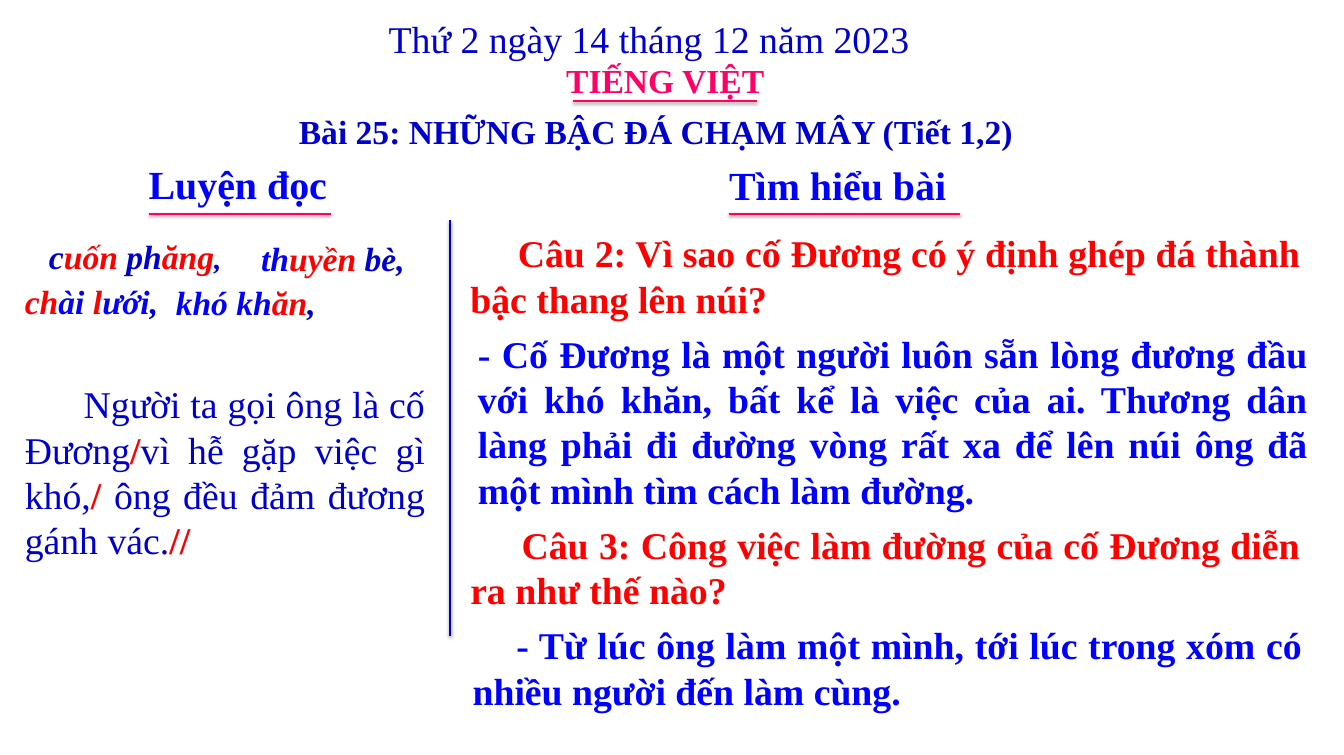
from lxml import etree
from pptx import Presentation
from pptx import util as u
from pptx.dml.color import RGBColor
from pptx.enum import shapes, text
from pptx.oxml import ns

FONT = "Times New Roman"
COLORS = {"navy": "0000CC", "blue": "0000FF", "red": "FF0000", "pink": "FF0066"}
ALIGN = {"left": text.PP_ALIGN.LEFT, "center": text.PP_ALIGN.CENTER,
         "justify": text.PP_ALIGN.JUSTIFY}


def color(name):
    return RGBColor.from_string(COLORS[name])


def write(sp, runs, size=36, bold=False, italic=False, align="left",
          wrap=True, indent=0, inset=(0.1, 0.05)):
    tf = sp.text_frame
    tf.word_wrap = wrap
    tf.auto_size = text.MSO_AUTO_SIZE.SHAPE_TO_FIT_TEXT
    tf.vertical_anchor = text.MSO_ANCHOR.TOP
    tf.margin_left = tf.margin_right = u.Inches(inset[0])
    tf.margin_top = tf.margin_bottom = u.Inches(inset[1])
    p = tf.paragraphs[0]
    p.alignment = ALIGN[align]
    if indent:
        pPr = p._p.get_or_add_pPr()
        pPr.set("marL", "0")
        pPr.set("indent", str(u.Inches(indent)))
    for content, name, *changes in runs:
        style = {"size": size, "bold": bold, **(changes[0] if changes else {})}
        r = p.add_run()
        r.text = content
        r.font.name = FONT
        r.font.size = u.Pt(style["size"])
        r.font.bold = style["bold"]
        r.font.italic = italic
        r.font.color.rgb = color(name)


def place(sp, box):
    sp.left, sp.top, sp.width, sp.height = map(u.Inches, box)


def add_text(s, box, runs, **style):
    sp = s.shapes.add_textbox(*map(u.Inches, box))
    write(sp, runs, **style)


def add_rule(s, start, end, name):
    sp = s.shapes.add_connector(shapes.MSO_CONNECTOR.STRAIGHT,
                                *map(u.Inches, start + end))
    sp.line.color.rgb = color(name)
    sp.line.width = u.Pt(2)
    effects = etree.SubElement(sp._element.spPr, ns.qn("a:effectLst"))
    shadow = etree.SubElement(effects, ns.qn("a:outerShdw"), blurRad=str(u.Pt(3.1)),
                              dist=str(u.Pt(1.6)), dir="5400000", rotWithShape="0")
    black = etree.SubElement(shadow, ns.qn("a:srgbClr"), val="000000")
    etree.SubElement(black, ns.qn("a:alpha"), val="38000")


def add_header(s):
    title = s.shapes.title
    place(title, (3.73, 1.39, 9.92, 0.7))
    write(title, [("Bài 25: NHỮNG BẬC ĐÁ CHẠM MÂY (Tiết 1,2)", "navy")],
          size=32, bold=True, align="center", inset=(0.16, 0.08))
    add_text(s, (5.05, 0.16, 7.17, 0.71),
             [("Thứ 2 ngày 14 tháng 12 năm 2023", "navy")], wrap=False)
    add_text(s, (7.4, 0.75, 2.85, 0.64), [("TIẾNG VIỆT", "pink")],
             size=32, bold=True, wrap=False)
    add_rule(s, (7.59, 1.34), (10.03, 1.34), "pink")


def add_heading(s, box, label, start, end):
    add_text(s, box, [(label, "blue")], size=38, bold=True, align="center",
             wrap=False, inset=(0.08, 0.04))
    add_rule(s, (start, 2.83), (end, 2.83), "pink")


def add_reading(s):
    words = [
        ((0.55, 3.08, 2.51, 0.64), "justify",
         [("c", "navy"), ("uốn ", "red"), ("ph", "navy"), ("ăng", "red"),
          (",", "navy", {"size": 28})]),
        ((3.36, 3.1, 2.23, 0.64), "left",
         [("th", "blue"), ("uyền ", "red"), ("bè,", "navy")]),
        ((0.23, 3.67, 2.09, 0.64), "justify",
         [("ch", "red"), ("ài ", "blue"), ("l", "red"), ("ưới", "blue"), (", ", "navy")]),
        ((2.23, 3.69, 2.15, 0.64), "justify",
         [("khó kh", "blue"), ("ăn", "red"), (",", "navy")]),
    ]
    for box, align, runs in words:
        add_text(s, box, runs, size=32, bold=True, italic=True, align=align, wrap=False)
    strong = {"bold": True}
    add_text(s, (0.23, 5, 5.5, 2.52),
             [("Người ta gọi ông là cố Đương", "navy"), ("/", "red", strong),
              ("vì hễ gặp việc gì khó,", "navy"), ("/ ", "red", strong),
              ("ông đều đảm đương gánh vác.", "navy"), ("//", "red", strong)],
             align="justify", indent=0.78)


def add_questions(s):
    items = [
        (6.13, 3, 1.31, 0.63, "red",
         "Câu 2: Vì sao cố Đương có ý định ghép đá thành bậc thang lên núi?"),
        (6.23, 4.33, 2.52, 0, "blue",
         "- Cố Đương là một người luôn sẵn lòng đương đầu với khó khăn, bất kể là "
         "việc của ai. Thương dân làng phải đi đường vòng rất xa để lên núi ông đã "
         "một mình tìm cách làm đường."),
        (6.13, 6.86, 1.31, 0.68, "red",
         "Câu 3: Công việc làm đường của cố Đương diễn ra như thế nào?"),
        (6.16, 8.19, 1.31, 0.58, "blue",
         "- Từ lúc ông làm một mình, tới lúc trong xóm có nhiều người đến làm cùng."),
    ]
    for left, top, height, indent, name, content in items:
        add_text(s, (left, top, 11.19, height), [(content, name)],
                 bold=True, align="justify", indent=indent)


def main():
    prs = Presentation()
    prs.slide_width, prs.slide_height = u.Inches(17.8), u.Inches(10)
    s = prs.slides.add_slide(prs.slide_layouts[5])
    add_header(s)
    add_rule(s, (5.96, 2.92), (5.96, 8.42), "navy")
    add_heading(s, (1.88, 2.07, 2.54, 0.72), "Luyện đọc", 1.97, 4.38)
    add_heading(s, (9.57, 2.09, 3.05, 0.72), "Tìm hiểu bài", 9.65, 12.72)
    add_reading(s)
    add_questions(s)
    prs.save("out.pptx")


if __name__ == "__main__":
    main()
